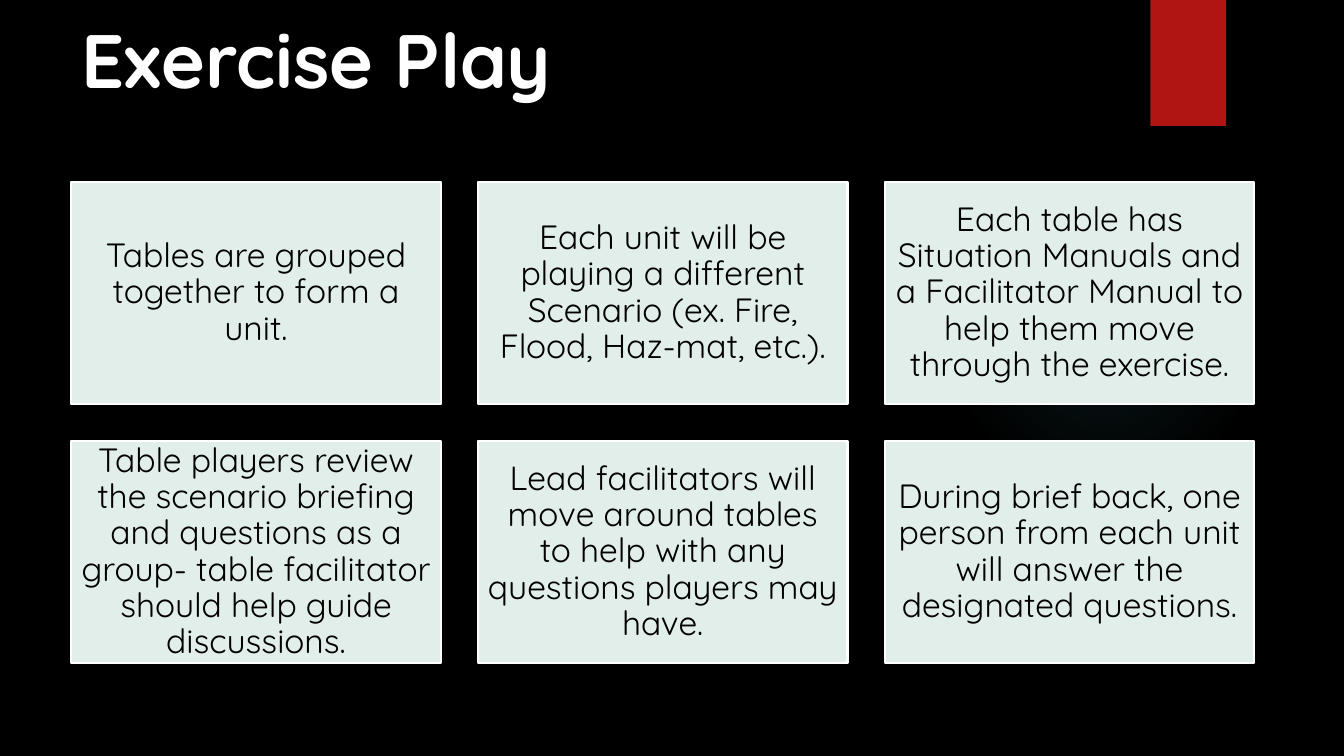
from dataclasses import dataclass

from lxml import etree
from pptx import Presentation
from pptx.dml.color import RGBColor
from pptx.enum import shapes, text
from pptx.oxml import ns
from pptx.util import Pt


@dataclass(frozen=True)
class Theme:
    font: str = "Quicksand"
    background: str = "000000"
    tag: str = "B01513"
    glow: str = "50B9C1"
    card: str = "E1EEE9"
    light: str = "FFFFFF"
    dark: str = "000000"
    title_size: int = 54
    card_size: int = 24


THEME = Theme()
STEPS = [
    "Tables are grouped together to form a unit.",
    "Each unit will be playing a different Scenario (ex. Fire, Flood, Haz-mat, etc.).",
    "Each table has Situation Manuals and a Facilitator Manual to help them move through the exercise.",
    "Table players review the scenario briefing and questions as a group- table facilitator "
    "should help guide discussions.",
    "Lead facilitators will move around tables to help with any questions players may have.",
    "During brief back, one person from each unit will answer the designated questions.",
]


def write_text(shape, content, *, size, color, bold=False, align=text.PP_ALIGN.LEFT,
               anchor=text.MSO_ANCHOR.TOP, line_spacing=1.0, inset=7.2):
    frame = shape.text_frame
    frame.word_wrap = True
    frame.auto_size = text.MSO_AUTO_SIZE.NONE
    frame.vertical_anchor = anchor
    frame.margin_left = frame.margin_right = Pt(7.2)
    frame.margin_top = frame.margin_bottom = Pt(inset)
    frame.text = content
    paragraph = frame.paragraphs[0]
    paragraph.alignment = align
    paragraph.line_spacing = line_spacing
    font = paragraph.runs[0].font
    font.name = THEME.font
    font.size = Pt(size)
    font.bold = bold
    font.color.rgb = RGBColor.from_string(color)


def add_block(slide, kind, box, fill, line=None):
    shape = slide.shapes.add_shape(kind, *map(Pt, box))
    shape.shadow.inherit = False
    shape.fill.solid()
    shape.fill.fore_color.rgb = RGBColor.from_string(fill)
    if line:
        shape.line.color.rgb = RGBColor.from_string(line)
        shape.line.width = Pt(1.5)
    else:
        shape.line.fill.background()
    return shape


def add_glow(slide, box):
    """Add a faint round light that fades out from its centre."""
    shape = add_block(slide, shapes.MSO_SHAPE.OVAL, box, THEME.glow)
    gradient = etree.Element(ns.qn("a:gradFill"), rotWithShape="1")
    stops = etree.SubElement(gradient, ns.qn("a:gsLst"))
    for position, opacity in ((0, 7), (36, 6), (69, 0)):
        stop = etree.SubElement(stops, ns.qn("a:gs"), pos=str(position * 1000))
        color = etree.SubElement(stop, ns.qn("a:srgbClr"), val=THEME.glow)
        etree.SubElement(color, ns.qn("a:alpha"), val=str(opacity * 1000))
    circle = etree.SubElement(gradient, ns.qn("a:path"), path="circle")
    etree.SubElement(circle, ns.qn("a:fillToRect"), l="50000", t="50000", r="50000", b="50000")
    solid = shape.element.spPr.find(ns.qn("a:solidFill"))
    solid.getparent().replace(solid, gradient)


def add_title(slide, content, box):
    title = slide.shapes.title
    title.left, title.top, title.width, title.height = map(Pt, box)
    write_text(title, content, size=THEME.title_size, color=THEME.light, bold=True, inset=3.6)


def add_card_grid(slide, steps, box, columns=3, gap=26.4):
    """Fill the box with equal cards, row by row."""
    left, top, width, height = box
    rows = -(-len(steps) // columns)
    card_width = (width - gap * (columns - 1)) / columns
    card_height = (height - gap * (rows - 1)) / rows
    for index, step in enumerate(steps):
        row, column = divmod(index, columns)
        card_box = (left + column * (card_width + gap), top + row * (card_height + gap),
                    card_width, card_height)
        card = add_block(slide, shapes.MSO_SHAPE.RECTANGLE, card_box, THEME.card, THEME.light)
        write_text(card, step, size=THEME.card_size, color=THEME.dark, line_spacing=0.9,
                   align=text.PP_ALIGN.CENTER, anchor=text.MSO_ANCHOR.MIDDLE)


def build_exercise_slide(presentation):
    slide = presentation.slides.add_slide(presentation.slide_layouts[5])
    background = slide.background.fill
    background.solid()
    background.fore_color.rgb = RGBColor.from_string(THEME.background)
    add_glow(slide, (677.5, 131.8, 221.8, 221.8))
    add_block(slide, shapes.MSO_SHAPE.RECTANGLE, (821.8, 0, 54, 90), THEME.tag)
    add_title(slide, "Exercise Play", (51, 5.8, 741, 110))
    add_card_grid(slide, STEPS, (50.8, 130, 845.2, 343.6))


def main():
    presentation = Presentation()
    presentation.slide_width = Pt(960)
    presentation.slide_height = Pt(540)
    build_exercise_slide(presentation)
    presentation.save("out.pptx")


if __name__ == "__main__":
    main()
